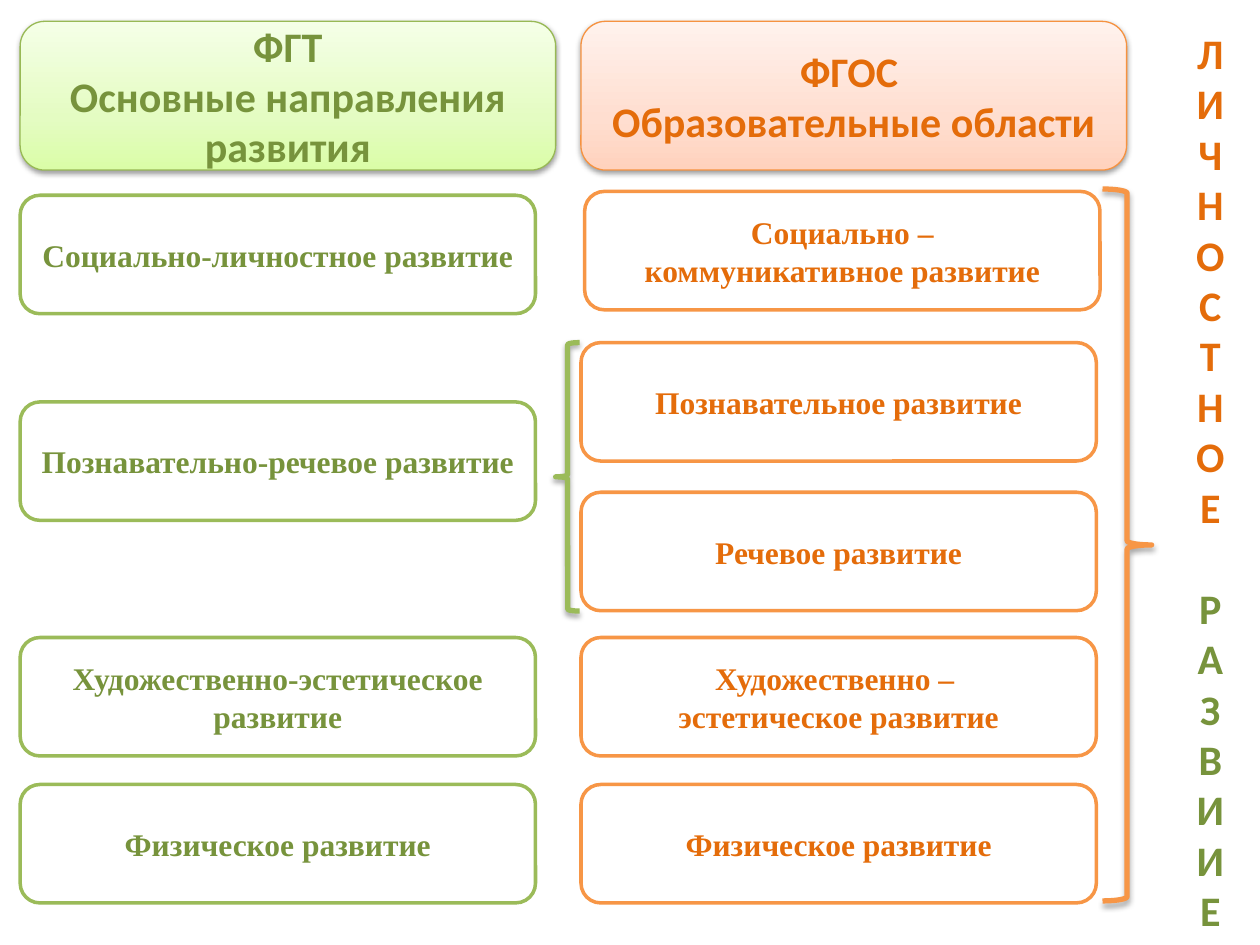
from lxml.etree import SubElement
from pptx import Presentation
from pptx.dml.color import RGBColor
from pptx.enum.shapes import MSO_SHAPE as Shape
from pptx.enum.text import MSO_ANCHOR as Anchor, PP_ALIGN as Align
from pptx.oxml.ns import qn
from pptx.util import Pt

GREEN = {"text": "77933C", "line": "9BBB59", "header_line": "98B955",
         "stops": [(0, "DAFDA7"), (35, "E4FCC2"), (100, "F5FFE7")]}
ORANGE = {"text": "E46C0A", "line": "F79646", "header_line": "F69240",
          "stops": [(0, "FFD2BD"), (35, "FFDED0"), (100, "FFF2ED")]}
HEADER_FONT = {"name": "Calibri", "size": Pt(24), "bold": True}
BOX_FONT = {"name": "Times New Roman", "size": Pt(18), "bold": True}
LEFT_X, RIGHT_X = 11.5, 332
BOX_WIDTH, BOX_HEIGHT = 294.5, 67.7


def color(value):
    return RGBColor.from_string(value)


def apply(target, values):
    for name, value in values.items():
        setattr(target, name, value)


def add_color(parent, value):
    return SubElement(parent, qn("a:srgbClr"), val=value)


class SlideBuilder:
    """Draws the styled elements of one slide, with lengths in points."""

    def __init__(self, slide):
        self.slide = slide

    def outline(self, kind, bounds, line, width):
        shape = self.slide.shapes.add_shape(kind, *map(Pt, bounds))
        shape.shadow.inherit = False
        shape.line.color.rgb = color(line)
        shape.line.width = Pt(width)
        return shape

    def shadow(self, shape, distance, opacity):
        effects = shape._element.spPr.find(qn("a:effectLst"))
        outer = SubElement(effects, qn("a:outerShdw"), blurRad=str(Pt(3.1)),
                           dist=str(Pt(distance)), dir="5400000", rotWithShape="0")
        SubElement(add_color(outer, "000000"), qn("a:alpha"), val=str(opacity * 1000))

    def gradient(self, shape, stops):
        shape.fill.gradient()
        shape.fill.gradient_angle = 90
        stop_list = shape._element.spPr.find(qn("a:gradFill")).find(qn("a:gsLst"))
        for stop in list(stop_list):
            stop_list.remove(stop)
        for position, value in stops:
            add_color(SubElement(stop_list, qn("a:gs"), pos=str(position * 1000)), value)

    def label(self, shape, text, font, theme):
        frame = shape.text_frame
        apply(frame, {"text": text, "word_wrap": True, "vertical_anchor": Anchor.MIDDLE})
        for paragraph in frame.paragraphs:
            paragraph.alignment = Align.CENTER
            for run in paragraph.runs:
                apply(run.font, font)
                run.font.color.rgb = color(theme["text"])

    def header(self, text, left, width, theme):
        shape = self.outline(Shape.ROUNDED_RECTANGLE, (left, 12.2, width, 85),
                             theme["header_line"], 0.75)
        self.gradient(shape, theme["stops"])
        self.shadow(shape, 1.6, 38)
        self.label(shape, text, HEADER_FONT, theme)

    def box(self, text, left, top, theme):
        shape = self.outline(Shape.ROUNDED_RECTANGLE, (left, top, BOX_WIDTH, BOX_HEIGHT),
                             theme["line"], 2)
        shape.fill.solid()
        shape.fill.fore_color.rgb = color("FFFFFF")
        self.label(shape, text, BOX_FONT, theme)

    def brace(self, kind, bounds, theme):
        shape = self.outline(kind, bounds, theme["line"], 3)
        shape.fill.background()
        self.shadow(shape, 1.8, 35)

    def vertical_words(self, words, bounds):
        shape = self.slide.shapes.add_textbox(*map(Pt, bounds))
        self.label(shape, "\n".join("".join(word for word, _ in words)), HEADER_FONT, ORANGE)
        shape.text_frame.vertical_anchor = Anchor.TOP
        paragraphs = iter(shape.text_frame.paragraphs)
        for index, (word, theme) in enumerate(words):
            for position, paragraph in zip(range(len(word)), paragraphs):
                paragraph.runs[0].font.color.rgb = color(theme["text"])
                if index and position == 0:
                    paragraph.space_before = Pt(29)


def main():
    presentation = Presentation()
    apply(presentation, {"slide_width": Pt(720), "slide_height": Pt(540)})
    builder = SlideBuilder(presentation.slides.add_slide(presentation.slide_layouts[6]))

    builder.header("ФГТ\nОсновные направления развития", LEFT_X, 306, GREEN)
    for text, top in [("Социально-личностное развитие", 111.6),
                      ("Познавательно-речевое развитие", 229.7),
                      ("Художественно-эстетическое развитие", 364.3),
                      ("Физическое развитие", 448.3)]:
        builder.box(text, LEFT_X, top, GREEN)

    builder.header("ФГОС \nОбразовательные области", RIGHT_X, 311.8, ORANGE)
    for text, left, top in [("Социально –\vкоммуникативное развитие", 334.1, 109.4),
                            ("Познавательное развитие", RIGHT_X, 195.8),
                            ("Речевое развитие", RIGHT_X, 281.3),
                            ("Художественно – \vэстетическое развитие", RIGHT_X, 364.3),
                            ("Физическое развитие", RIGHT_X, 448.3)]:
        builder.box(text, left, top, ORANGE)

    builder.brace(Shape.RIGHT_BRACE, (630, 108, 28.1, 406.8), ORANGE)
    builder.brace(Shape.LEFT_BRACE, (317.5, 195.8, 13.7, 153.4), GREEN)
    builder.vertical_words([("ЛИЧНОСТНОЕ", ORANGE), ("РАЗВИИЕ", GREEN)],
                           (671.8, 12.2, 39.6, 530.6))
    presentation.save("out.pptx")


if __name__ == "__main__":
    main()
